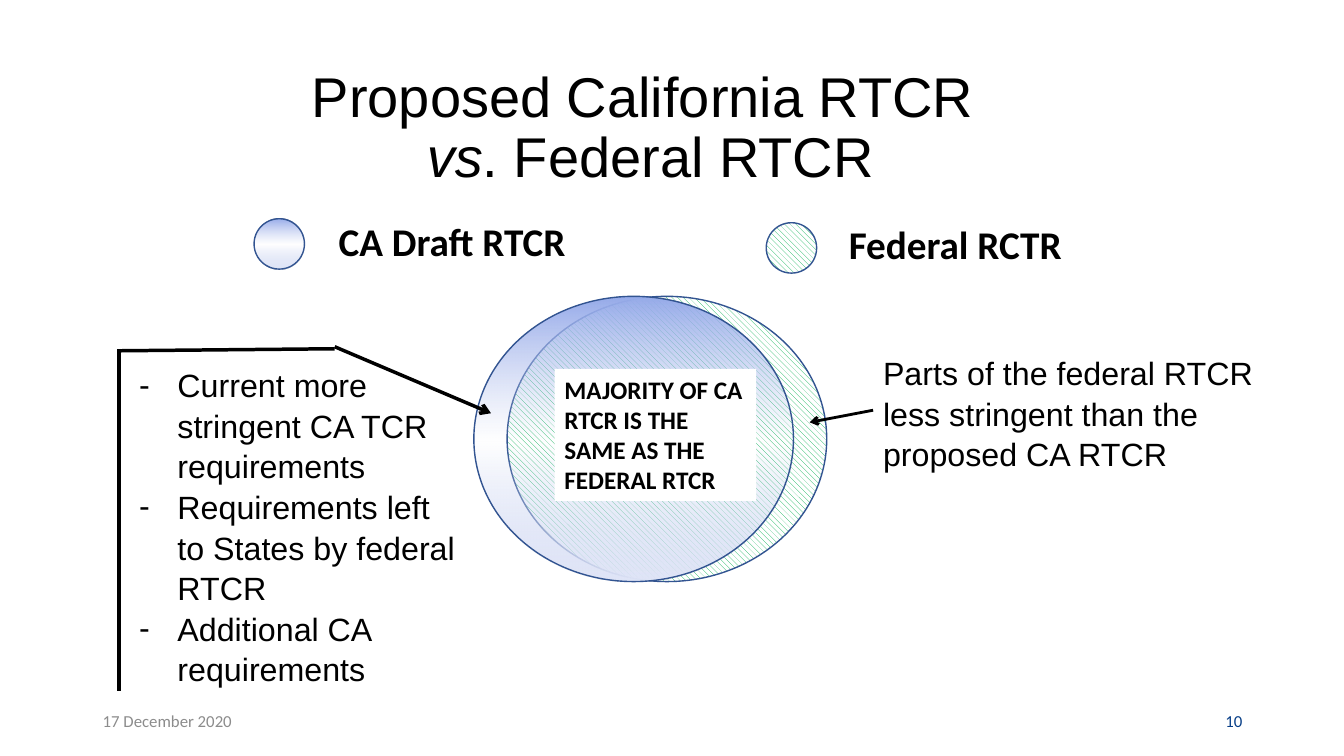
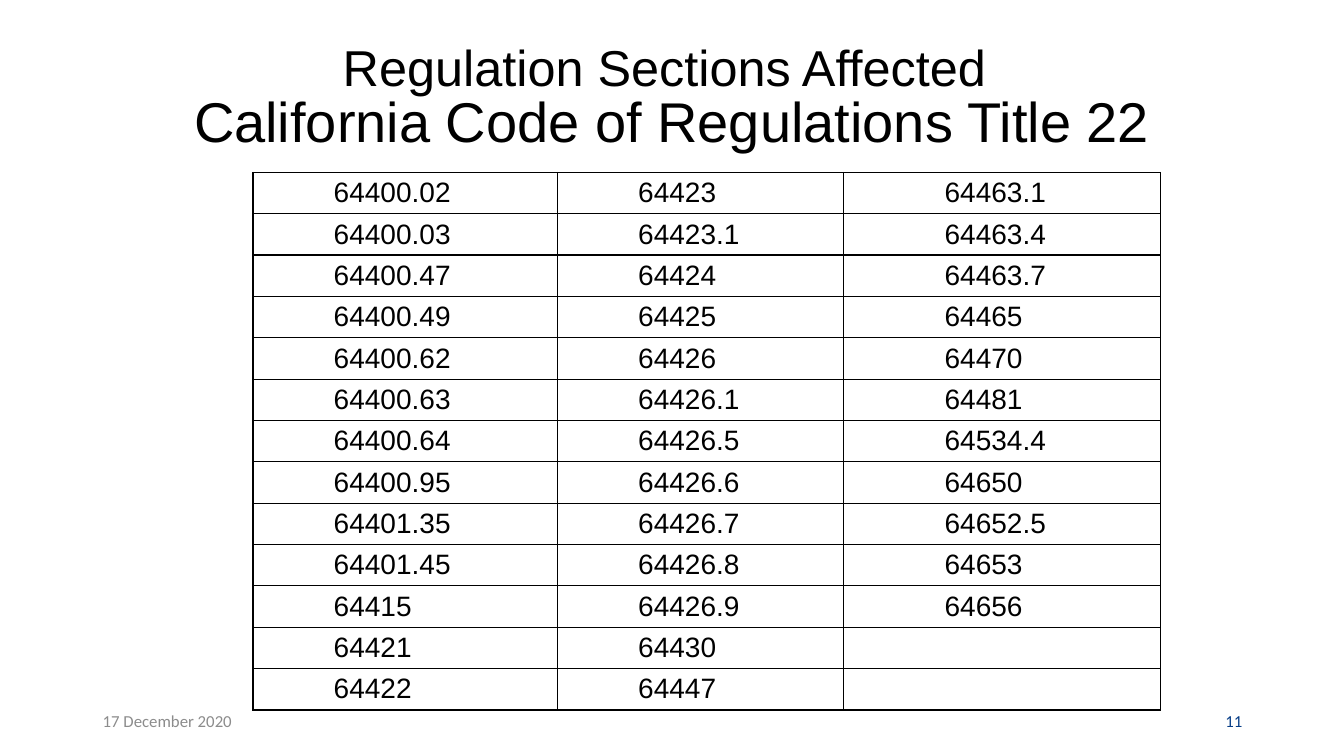
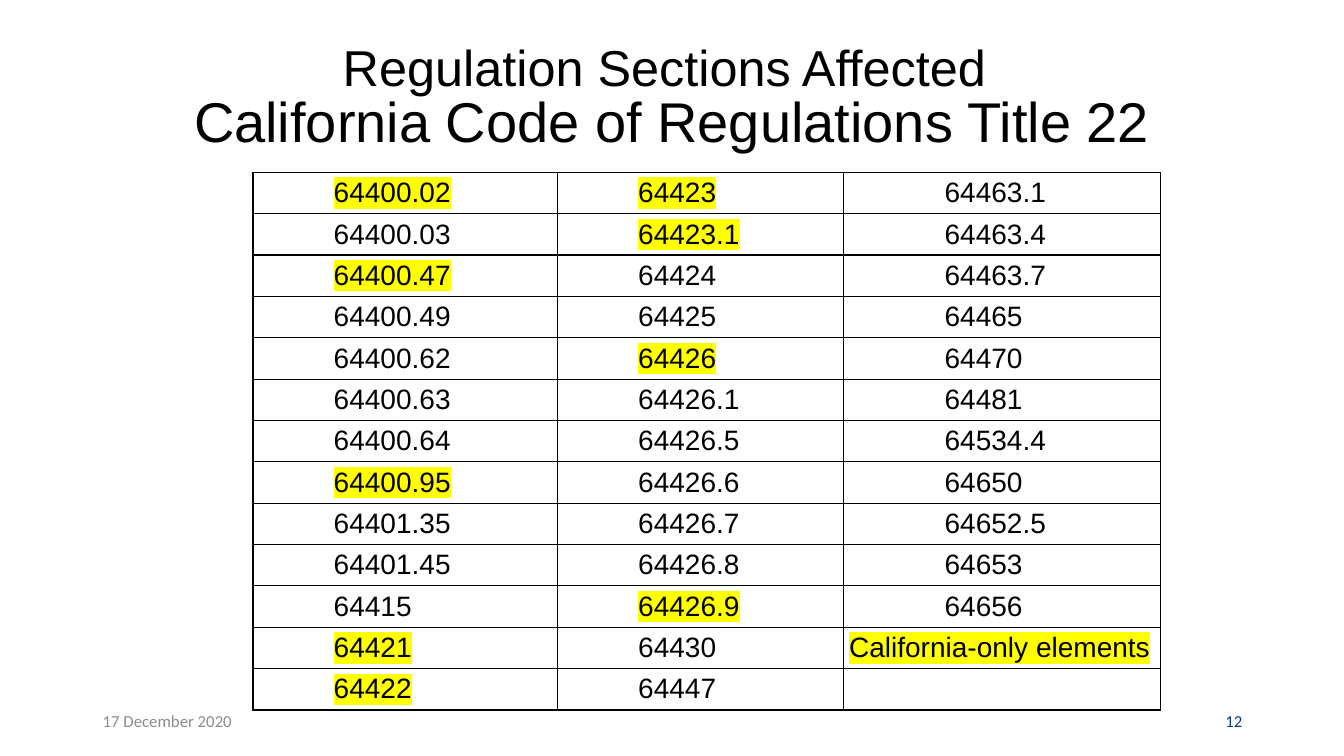
from lxml.etree import SubElement
from pptx import Presentation
from pptx.dml.color import RGBColor
from pptx.enum.dml import MSO_PATTERN
from pptx.enum.shapes import MSO_CONNECTOR, MSO_SHAPE
from pptx.enum.text import MSO_ANCHOR as ANCHOR, MSO_AUTO_SIZE as AUTO_SIZE, PP_ALIGN as ALIGN
from pptx.oxml import parse_xml
from pptx.oxml.ns import nsdecls, qn
from pptx.util import Inches, Pt

BLACK, WHITE, OUTLINE = "000000", "FFFFFF", "325491"
GREEN, YELLOW, GREY, NAVY = "00B050", "FFFF00", "8C8C8C", "073E87"
HEADING, PLAIN = "Arial", "Calibri"
DATE = "17 December 2020"
GRADIENT_STOPS = [(0, "96ABEA", 100), (51, "C0CBF0", 0), (100, "E0E5F7", 100)]
COLUMNS = [
    ["64400.02", "64400.03", "64400.47", "64400.49", "64400.62", "64400.63", "64400.64",
     "64400.95", "64401.35", "64401.45", "64415", "64421", "64422"],
    ["64423", "64423.1", "64424", "64425", "64426", "64426.1", "64426.5",
     "64426.6", "64426.7", "64426.8", "64426.9", "64430", "64447"],
    ["64463.1", "64463.4", "64463.7", "64465", "64470", "64481", "64534.4",
     "64650", "64652.5", "64653", "64656"],
]
COLUMN_WIDTHS = [3.02, 2.84, 3.14]
COLUMN_INDENTS = [0.8, 0.8, 1]
ROW_HEIGHT = 0.41
CALIFORNIA_ONLY = {"64400.02", "64400.47", "64400.95", "64421", "64422",
                   "64423", "64423.1", "64426", "64426.9"}
KEY_LABEL = "California-only elements"
KEY_ROW = 11


def colour(value):
    """Turn a hex string into a colour."""
    return RGBColor.from_string(value)


def style(span, size, font=HEADING, ink=BLACK, bold=False, italic=False):
    """Format one run."""
    span.font.size, span.font.name = Pt(size), font
    span.font.bold, span.font.italic = bold, italic
    span.font.color.rgb = colour(ink)


def place(shape, left, top, width, height):
    """Move and size a shape, in inches."""
    shape.left, shape.top = Inches(left), Inches(top)
    shape.width, shape.height = Inches(width), Inches(height)


def write(shape, text, size, font=HEADING, ink=BLACK, bold=False,
          align=ALIGN.LEFT, anchor=ANCHOR.TOP, spacing=1):
    """Fill a shape with wrapped text, one paragraph a line."""
    frame = shape.text_frame
    frame.text = text
    frame.word_wrap = True
    frame.auto_size = AUTO_SIZE.NONE
    frame.vertical_anchor = anchor
    for para in frame.paragraphs:
        para.alignment, para.line_spacing = align, spacing
        para.space_before = Pt(0)
        for span in para.runs:
            style(span, size, font, ink, bold)


def add_label(page, at, text, size, **look):
    """Add a text box."""
    box = page.shapes.add_textbox(*map(Inches, at))
    write(box, text, size, **look)


def add_page(deck, layout, number):
    """Add a slide with its date and number."""
    page = deck.slides.add_slide(deck.slide_layouts[layout])
    footer = {"font": PLAIN, "anchor": ANCHOR.MIDDLE}
    add_label(page, (0.92, 6.95, 3, 0.4), DATE, 12, ink=GREY, **footer)
    add_label(page, (9.42, 6.95, 3, 0.4), str(number), 12, ink=NAVY, align=ALIGN.RIGHT, **footer)
    return page


def set_title(page, at, text, spacing):
    """Place and write the title at its usual size."""
    title = page.shapes.title
    place(title, *at)
    write(title, text, 40, align=ALIGN.CENTER, anchor=ANCHOR.MIDDLE, spacing=spacing)
    return title.text_frame.paragraphs[0]


def add_shape(page, kind, at):
    """Add a preset shape without shadow."""
    shape = page.shapes.add_shape(kind, *map(Inches, at))
    shape.shadow.inherit = False
    return shape


def add_circle(page, at):
    """Add an outlined ellipse."""
    circle = add_shape(page, MSO_SHAPE.OVAL, at)
    circle.line.color.rgb = colour(OUTLINE)
    circle.line.width = Pt(1)
    return circle


def add_federal_circle(page, at):
    """Add a hatched ellipse."""
    fill = add_circle(page, at).fill
    fill.patterned()
    fill.pattern = MSO_PATTERN.WIDE_DOWNWARD_DIAGONAL
    fill.fore_color.rgb = colour(GREEN)
    fill.back_color.rgb = colour(WHITE)


def add_state_circle(page, at):
    """Add an ellipse with a gradient that is clear in the middle."""
    stops = "".join(
        f'<a:gs pos="{position * 1000}"><a:srgbClr val="{value}">'
        f'<a:alpha val="{opacity * 1000}"/></a:srgbClr></a:gs>'
        for position, value, opacity in GRADIENT_STOPS)
    gradient = parse_xml(
        f'<a:gradFill {nsdecls("a")} rotWithShape="1"><a:gsLst>{stops}</a:gsLst>'
        '<a:lin ang="5400000" scaled="0"/></a:gradFill>')
    properties = add_circle(page, at).element.spPr
    properties.find(qn("a:prstGeom")).addnext(gradient)


def add_line(page, start, end, width=2.5, arrow=False):
    """Add a straight black line, with an arrowhead at its end if asked."""
    line = page.shapes.add_connector(MSO_CONNECTOR.STRAIGHT, *map(Inches, start + end))
    line.line.color.rgb = colour(BLACK)
    line.line.width = Pt(width)
    properties = line.element.spPr
    if arrow:
        SubElement(properties.find(qn("a:ln")), qn("a:tailEnd"), type="arrow")
    SubElement(properties, qn("a:effectLst"))


def set_dashes(frame):
    """Give each paragraph a hanging dash."""
    indent = Inches(0.38)
    for para in frame.paragraphs:
        properties = para._p.get_or_add_pPr()
        properties.set("marL", str(indent))
        properties.set("indent", str(-indent))
        SubElement(properties, qn("a:buFont"), typeface=HEADING)
        SubElement(properties, qn("a:buChar"), char="-")


def highlight(span):
    """Mark a coloured run in yellow."""
    mark = parse_xml(f'<a:highlight {nsdecls("a")}><a:srgbClr val="{YELLOW}"/></a:highlight>')
    span.font._element.find(qn("a:solidFill")).addnext(mark)


def set_borders(cell):
    """Draw thin black lines around a cell without fill."""
    properties = cell._tc.get_or_add_tcPr()
    for side in ("lnL", "lnR", "lnT", "lnB"):
        properties.append(parse_xml(
            f'<a:{side} {nsdecls("a")} w="12700"><a:solidFill>'
            f'<a:srgbClr val="{BLACK}"/></a:solidFill></a:{side}>'))
    cell.fill.background()


def write_cell(cell, text, indent, marked, align=ALIGN.LEFT):
    """Write one section number, highlighted if marked."""
    cell.margin_left, cell.margin_right = Inches(indent), Inches(0.1)
    cell.margin_top = cell.margin_bottom = Inches(0.05)
    cell.text_frame.text = text
    para = cell.text_frame.paragraphs[0]
    para.alignment = align
    for span in para.runs:
        style(span, 20)
        if marked:
            highlight(span)


def add_sections_table(page, marked):
    """Add the table of sections and return it."""
    rows = max(map(len, COLUMNS))
    at = (2.51, 1.71, sum(COLUMN_WIDTHS), rows * ROW_HEIGHT)
    table = page.shapes.add_table(rows, len(COLUMNS), *map(Inches, at)).table
    table.first_row = table.horz_banding = False
    for row in table.rows:
        row.height = Inches(ROW_HEIGHT)
    for column, width in enumerate(COLUMN_WIDTHS):
        table.columns[column].width = Inches(width)
    for cell in table.iter_cells():
        set_borders(cell)
    for column, (sections, indent) in enumerate(zip(COLUMNS, COLUMN_INDENTS)):
        for row, section in enumerate(sections):
            write_cell(table.cell(row, column), section, indent, section in marked)
    return table


def build_comparison(deck):
    """Build the slide that compares the two rules."""
    page = add_page(deck, 1, 10)
    para = set_title(page, (0.7, 0.56, 11.5, 1.45), "Proposed California RTCR \vvs", 0.9)
    para.runs[-1].font.italic = True
    ending = para.add_run()
    ending.text = ". Federal RTCR"
    style(ending, 40)

    add_federal_circle(page, (5.03, 2.94, 3.17, 2.83))
    add_state_circle(page, (4.7, 2.94, 3.17, 2.83))
    add_federal_circle(page, (7.6, 2.21, 0.5, 0.5))
    add_state_circle(page, (2.52, 2.17, 0.5, 0.5))
    add_label(page, (3.26, 2.11, 2.74, 0.57), "CA Draft RTCR", 28, font=PLAIN, bold=True)
    add_label(page, (8.32, 2.14, 2.58, 0.57), "Federal RCTR", 28, font=PLAIN, bold=True)

    add_line(page, (3.32, 3.44), (4.87, 4.1), arrow=True)
    add_line(page, (3.32, 3.46), (1.18, 3.48))
    add_line(page, (1.18, 3.46), (1.18, 6.86))
    add_line(page, (8.66, 4.07), (8.03, 4.19), width=2, arrow=True)

    differences = page.placeholders[1]
    place(differences, 1.28, 3.56, 3.41, 3.2)
    write(differences, "Current more stringent CA TCR requirements\n"
          "Requirements left to States by federal RTCR\n"
          "Additional CA requirements", 23, spacing=1.05)
    set_dashes(differences.text_frame)
    add_label(page, (8.66, 3.44, 3.96, 1.26),
              "Parts of the federal RTCR less stringent than the proposed CA RTCR",
              23, spacing=1.05)

    overlap = add_shape(page, MSO_SHAPE.RECTANGLE, (5.5, 3.66, 2, 1.31))
    overlap.fill.solid()
    overlap.fill.fore_color.rgb = colour(WHITE)
    overlap.line.fill.background()
    write(overlap, "MAJORITY OF CA RTCR IS THE SAME AS THE FEDERAL RTCR", 18, font=PLAIN, bold=True)


def build_sections(deck, number, marked=()):
    """Build a slide that lists the sections affected."""
    page = add_page(deck, 5, number)
    para = set_title(page, (0.37, 0.26, 12.58, 1.45),
                     "Regulation Sections Affected \vCalifornia Code of Regulations Title 22", 0.85)
    para.runs[0].font.size = Pt(36)
    table = add_sections_table(page, marked)
    if marked:
        write_cell(table.cell(KEY_ROW, 2), KEY_LABEL, 0.05, True, ALIGN.CENTER)


def main():
    """Build and save the deck."""
    deck = Presentation()
    deck.slide_width, deck.slide_height = Inches(13.33), Inches(7.5)
    build_comparison(deck)
    build_sections(deck, 11)
    build_sections(deck, 12, CALIFORNIA_ONLY)
    deck.save("out.pptx")


if __name__ == "__main__":
    main()
